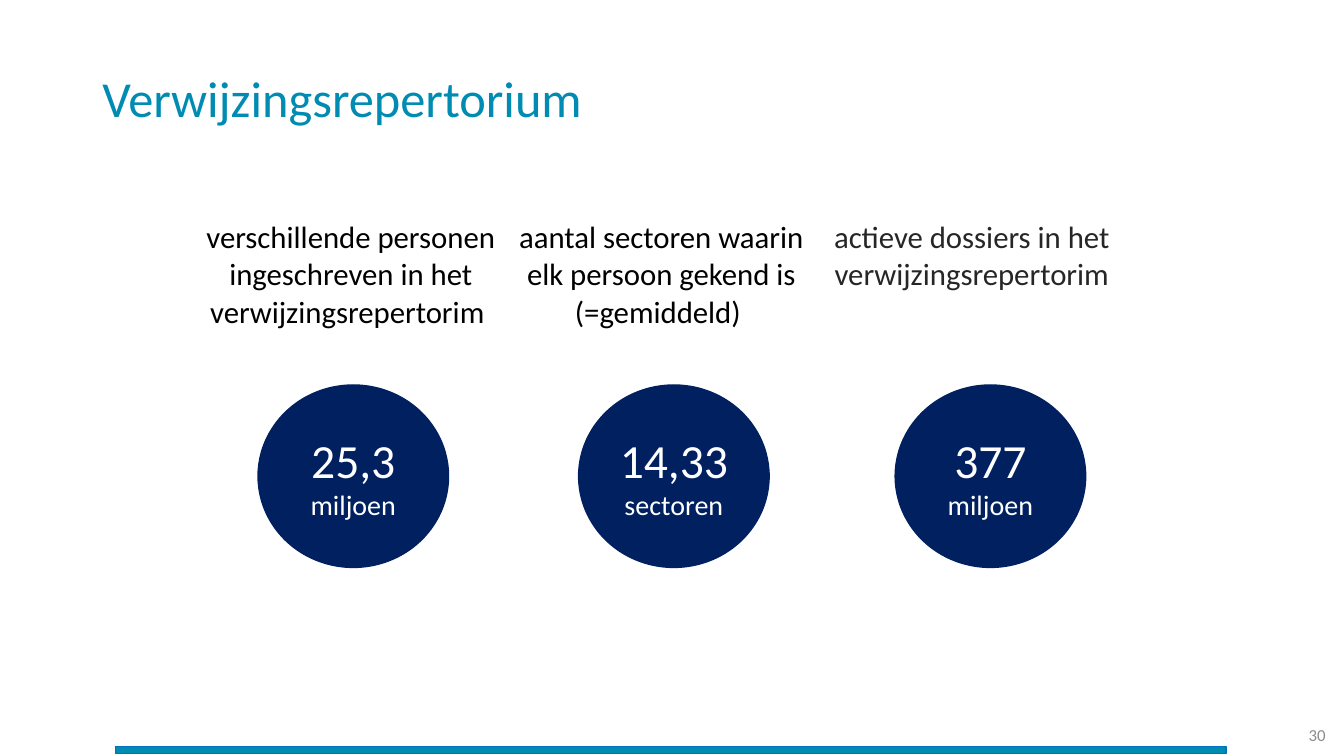
from dataclasses import dataclass

import pptx
import pptx.dml.color
import pptx.enum.shapes
import pptx.enum.text
import pptx.util

Pt = pptx.util.Pt
Shape = pptx.enum.shapes.MSO_SHAPE
Align = pptx.enum.text.PP_ALIGN
Anchor = pptx.enum.text.MSO_ANCHOR

TEAL, NAVY, WHITE = "008CB2", "002060", "FFFFFF"


@dataclass
class Figure:
    caption: str
    caption_color: str
    value: str
    unit: str
    left: float


FIGURES = [
    Figure("verschillende personen ingeschreven in het verwijzingsrepertorim ",
           "000000", "25,3", "miljoen", 184.3),
    Figure("aantal sectoren waarin elk persoon gekend is (=gemiddeld) ",
           "000000", "14,33", "sectoren", 413.3),
    Figure("actieve dossiers in het verwijzingsrepertorim",
           "262626", "377", "miljoen", 639.4),
]


def rgb(color: str) -> pptx.dml.color.RGBColor:
    return pptx.dml.color.RGBColor.from_string(color)


def format_run(r, size: float, color: str) -> None:
    r.font.name = "Calibri"
    r.font.size = Pt(size)
    r.font.color.rgb = rgb(color)


def add_text(slide, box: tuple, text: str, size: float, color: str, align: Align):
    sp = slide.shapes.add_textbox(*map(Pt, box))
    tf = sp.text_frame
    tf.word_wrap = True
    tf.vertical_anchor = Anchor.MIDDLE
    tf.text = text
    p = tf.paragraphs[0]
    p.alignment = align
    format_run(p.runs[0], size, color)
    return p


def add_filled(slide, kind: Shape, box: tuple, fill: str, line: str):
    sp = slide.shapes.add_shape(kind, *map(Pt, box))
    sp.shadow.inherit = False
    sp.fill.solid()
    sp.fill.fore_color.rgb = rgb(fill)
    sp.line.color.rgb = rgb(line)
    sp.line.width = Pt(1)
    return sp


def add_captions(slide, figures: list[Figure]) -> None:
    """Add the unfilled table whose top row holds the captions."""
    frame = slide.shapes.add_table(2, len(figures), Pt(139.7), Pt(131), Pt(665.4), Pt(326.2))
    table = frame.table
    table.first_row = table.horz_banding = False
    for row, height in zip(table.rows, (122.4, 203.8)):
        row.height = Pt(height)
        for cell in row.cells:
            cell.fill.background()
    for cell, figure in zip(table.rows[0].cells, figures):
        cell.margin_top = Pt(25.6)
        cell.text = figure.caption
        p = cell.text_frame.paragraphs[0]
        p.alignment = Align.CENTER
        format_run(p.runs[0], 22, figure.caption_color)


def add_circle(slide, figure: Figure) -> None:
    sp = add_filled(slide, Shape.FLOWCHART_CONNECTOR,
                    (figure.left, 275, 136.1, 130.3), NAVY, NAVY)
    tf = sp.text_frame
    tf.word_wrap = True
    tf.vertical_anchor = Anchor.MIDDLE
    p = tf.paragraphs[0]
    p.alignment = Align.CENTER
    for text, size in ((figure.value + " ", 34), (figure.unit, 20)):
        r = p.add_run()
        r.text = text
        format_run(r, size, WHITE)


def main() -> None:
    prs = pptx.Presentation()
    prs.slide_width, prs.slide_height = Pt(960), Pt(540)
    slide = prs.slides.add_slide(prs.slide_layouts[6])

    add_text(slide, (895, 510.5, 59, 28.8), "30", 12, "8C8C8C", Align.RIGHT)
    add_filled(slide, Shape.RECTANGLE, (82.4, 533, 793.4, 5.4), TEAL, "0070C0")
    title = add_text(slide, (66, 20, 828, 104.4), "Verwijzingsrepertorium", 36, TEAL, Align.LEFT)
    title.line_spacing = 0.9

    add_captions(slide, FIGURES)
    for figure in FIGURES:
        add_circle(slide, figure)

    prs.save("out.pptx")


if __name__ == "__main__":
    main()
